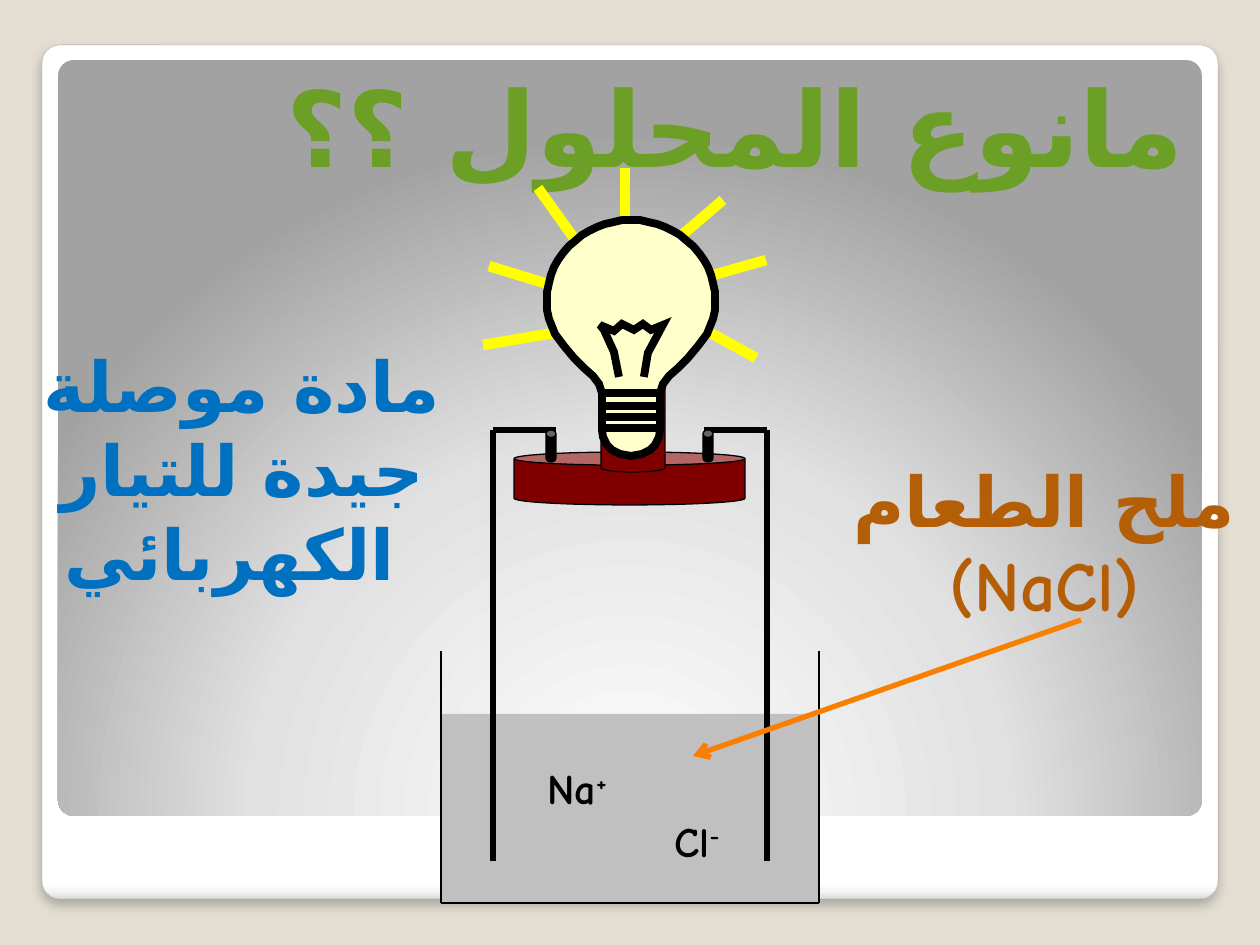
from math import cos, radians, sin

from pptx import Presentation
from pptx.dml.color import RGBColor
from pptx.enum.shapes import MSO_CONNECTOR, MSO_SHAPE
from pptx.enum.text import MSO_ANCHOR, MSO_AUTO_SIZE, PP_ALIGN
from pptx.oxml import parse_xml
from pptx.oxml.ns import qn
from pptx.util import Emu, Pt

STRAIGHT = MSO_CONNECTOR.STRAIGHT
ROUNDED, RECT, CAN = MSO_SHAPE.ROUNDED_RECTANGLE, MSO_SHAPE.RECTANGLE, MSO_SHAPE.CAN
TOP, BOTTOM = MSO_ANCHOR.TOP, MSO_ANCHOR.BOTTOM
LEFT, CENTER, RIGHT = PP_ALIGN.LEFT, PP_ALIGN.CENTER, PP_ALIGN.RIGHT
EMU_PER_PX = 914400 / 126
XMLNS = 'xmlns:a="http://schemas.openxmlformats.org/drawingml/2006/main"'
COLORS = {
    "page": "E3DED1", "edge": "A4A4A4", "title": "6B9F25", "black": "000000",
    "water": "C0C0C0", "ray": "FFFF00", "base": "800000", "glass": "FFFFCC",
    "blue": "0070C0", "brown": "B45F07", "arrow": "F97F00",
}


def px(value):
    return Emu(round(value * EMU_PER_PX))


def rgb(name):
    return RGBColor.from_string(COLORS[name])


def write_text(frame, text, *, size, color, font="Comic Neue", align=LEFT,
               rtl=False, superscript=""):
    """Fill a text frame, one paragraph a line, with an optional raised ending."""
    for index, line in enumerate(text.split("\n")):
        para = frame.paragraphs[0] if index == 0 else frame.add_paragraph()
        para.alignment = align
        if rtl:
            para._p.get_or_add_pPr().set("rtl", "1")
        for content, raised in ((line, False), (superscript, True)):
            if not content:
                continue
            span = para.add_run()
            span.text = content
            span.font.size, span.font.bold, span.font.name = Pt(size), True, font
            span.font.color.rgb = rgb(color)
            props = span._r.get_or_add_rPr()
            props.append(parse_xml(f'<a:cs {XMLNS} typeface="DejaVu Sans"/>'))
            if raised:
                props.set("baseline", "30000")


class Page:
    def __init__(self, slide):
        self.slide = slide
        self.shapes = slide.shapes
        slide.background.fill.solid()
        slide.background.fill.fore_color.rgb = rgb("page")

    def style(self, shape, fill=None, line=None, weight=0.75):
        shape.shadow.inherit = False
        if fill:
            shape.fill.solid()
            shape.fill.fore_color.rgb = rgb(fill)
        else:
            shape.fill.background()
        if line:
            shape.line.color.rgb = rgb(line)
            shape.line.width = Pt(weight)
        else:
            shape.line.fill.background()
        return shape

    def shape(self, kind, left, top, width, height, adjust=None, **style):
        shape = self.shapes.add_shape(kind, px(left), px(top), px(width), px(height))
        if adjust is not None:
            shape.adjustments[0] = adjust
        return self.style(shape, **style)

    def gradient(self, shape, stops, direction):
        stop_xml = "".join(f'<a:gs pos="{pos * 1000}"><a:srgbClr val="{color}"/></a:gs>'
                           for pos, color in stops)
        old = shape._element.spPr.find(qn("a:noFill"))
        old.getparent().replace(old, parse_xml(
            f'<a:gradFill {XMLNS} rotWithShape="1"><a:gsLst>{stop_xml}</a:gsLst>'
            f'{direction}</a:gradFill>'))

    def soft_shadow(self, shape):
        effects = shape._element.spPr.find(qn("a:effectLst"))
        effects.append(parse_xml(
            f'<a:outerShdw {XMLNS} blurRad="{Pt(6)}" dist="{Pt(4)}" dir="5400000" '
            'algn="t" rotWithShape="0"><a:srgbClr val="000000"><a:alpha val="25000"/>'
            '</a:srgbClr></a:outerShdw>'))

    def line(self, start, end, color="black", weight=0.75, arrow=False):
        line = self.shapes.add_connector(STRAIGHT, *map(px, start + end))
        line.line.color.rgb = rgb(color)
        line.line.width = Pt(weight)
        if arrow:
            line.line._get_or_add_ln().append(
                parse_xml(f'<a:tailEnd {XMLNS} type="arrow"/>'))
        line._element.spPr.append(parse_xml(f'<a:effectLst {XMLNS}/>'))

    def chain(self, points, **style):
        for start, end in zip(points, points[1:]):
            self.line(start, end, **style)

    def outline(self, points, closed=False, **style):
        builder = self.shapes.build_freeform(*points[0], scale=EMU_PER_PX)
        builder.add_line_segments(points[1:], close=closed)
        shape = self.style(builder.convert_to_shape(), **style)
        shape.line._get_or_add_ln().append(
            parse_xml(f'<a:miter {XMLNS} lim="800000"/>'))

    def text(self, left, top, width, height, text, anchor=TOP, wrap=True,
             grow=True, **style):
        box = self.shapes.add_textbox(px(left), px(top), px(width), px(height))
        frame = box.text_frame
        frame.word_wrap = wrap
        frame.vertical_anchor = anchor
        frame.auto_size = MSO_AUTO_SIZE.SHAPE_TO_FIT_TEXT if grow else MSO_AUTO_SIZE.NONE
        write_text(frame, text, **style)


def draw_frame(page):
    card = page.shape(ROUNDED, 42, 45, 1176, 854, 0.021, line="edge", weight=0.16)
    page.gradient(card, [(0, "FFFFFF"), (98, "FFFFFF"), (99, "F7F7F7"), (100, "DADADA")],
                  '<a:lin ang="5400000" scaled="0"/>')
    page.soft_shadow(card)
    panel = page.shape(ROUNDED, 58, 60, 1144, 756, 0.021)
    page.gradient(panel, [(0, "FFFFFF"), (55, "E1E1E1"), (100, "A2A2A2")],
                  '<a:path path="circle"><a:fillToRect l="50000" t="175000" '
                  'r="50000" b="-75000"/></a:path>')


def draw_circuit(page):
    # Beaker
    page.shape(RECT, 441, 714, 378, 189, fill="water")
    page.chain([(441, 651), (441, 903), (819, 903), (819, 651)])

    # Electrodes, mirrored about the middle of the slide
    for side in (1, -1):
        page.chain([(630 + side * x, y) for x, y in ((74, 430), (137, 430), (137, 861))],
                   weight=3)

    # Light rays
    rays = [((696, 325), (756, 358)), ((696, 280), (766, 260)), ((554, 333), (483, 345)),
            ((554, 286), (489, 266)), ((576, 241), (538, 188)), ((625, 233), (625, 168)),
            ((668, 247), (723, 200))]
    for start, end in rays:
        page.line(start, end, color="ray", weight=6)

    # Lamp holder and terminals
    page.shape(CAN, 514, 452, 231, 53, 0.25, fill="base", line="black")
    page.shape(CAN, 601, 374, 64, 98, 0.127, fill="base", line="black")
    for left in (546, 703):
        page.shape(CAN, left, 430, 10, 32, 0.75, fill="black", line="black")


def draw_bulb(page):
    # Glass: half a profile, mirrored about its axis
    axis = 631
    head = [(round(84 * sin(radians(a))), round(300 - 80 * cos(radians(a))))
            for a in range(0, 91, 6)]
    neck = [(84, 310), (82, 319), (76, 334), (67, 346), (57, 358), (47, 368), (38, 376),
            (32, 384), (29, 393), (29, 430), (28, 437), (24, 445), (19, 450), (11, 454),
            (0, 456)]
    half = head + neck
    points = ([(axis + x, y) for x, y in half]
              + [(axis - x, y) for x, y in reversed(half[1:-1])])
    page.outline(points, closed=True, fill="glass", line="black", weight=4.5)

    # Filament and screw thread
    filament = [(619, 377), (614, 352), (604, 330), (600, 325), (614, 331), (622, 324),
                (634, 330), (643, 324), (651, 330), (663, 325), (648, 353), (644, 377)]
    thread = [(602, 393), (660, 393), (660, 406), (602, 406),
              (602, 417), (660, 417), (660, 428), (602, 428)]
    for points in (filament, thread):
        page.outline(points, line="black", weight=4.5)


def draw_labels(page):
    page.text(535, 756, 101, 64, "Na", wrap=False, size=24, color="black", superscript="+")
    page.text(662, 809, 81, 64, "Cl", wrap=False, size=24, color="black", superscript="-")
    page.text(-10, 336, 504, 183, "مادة موصلة جيدة للتيار الكهربائي ",
              size=40, color="blue", align=CENTER)
    page.line((1081, 620), (693, 756), color="arrow", weight=3, arrow=True)
    page.text(829, 451, 431, 183, "ملح الطعام\n(NaCl)",
              size=40, color="brown", align=CENTER)


def main():
    deck = Presentation()
    deck.slide_width, deck.slide_height = px(1260), px(945)
    page = Page(deck.slides.add_slide(deck.slide_layouts[6]))
    draw_frame(page)
    page.text(63, 38, 1134, 157, "مانوع المحلول ؟؟", anchor=BOTTOM, grow=False, size=60,
              color="title", font="DejaVu Sans", align=RIGHT, rtl=True)
    draw_circuit(page)
    draw_bulb(page)
    draw_labels(page)
    deck.save("out.pptx")


if __name__ == "__main__":
    main()
